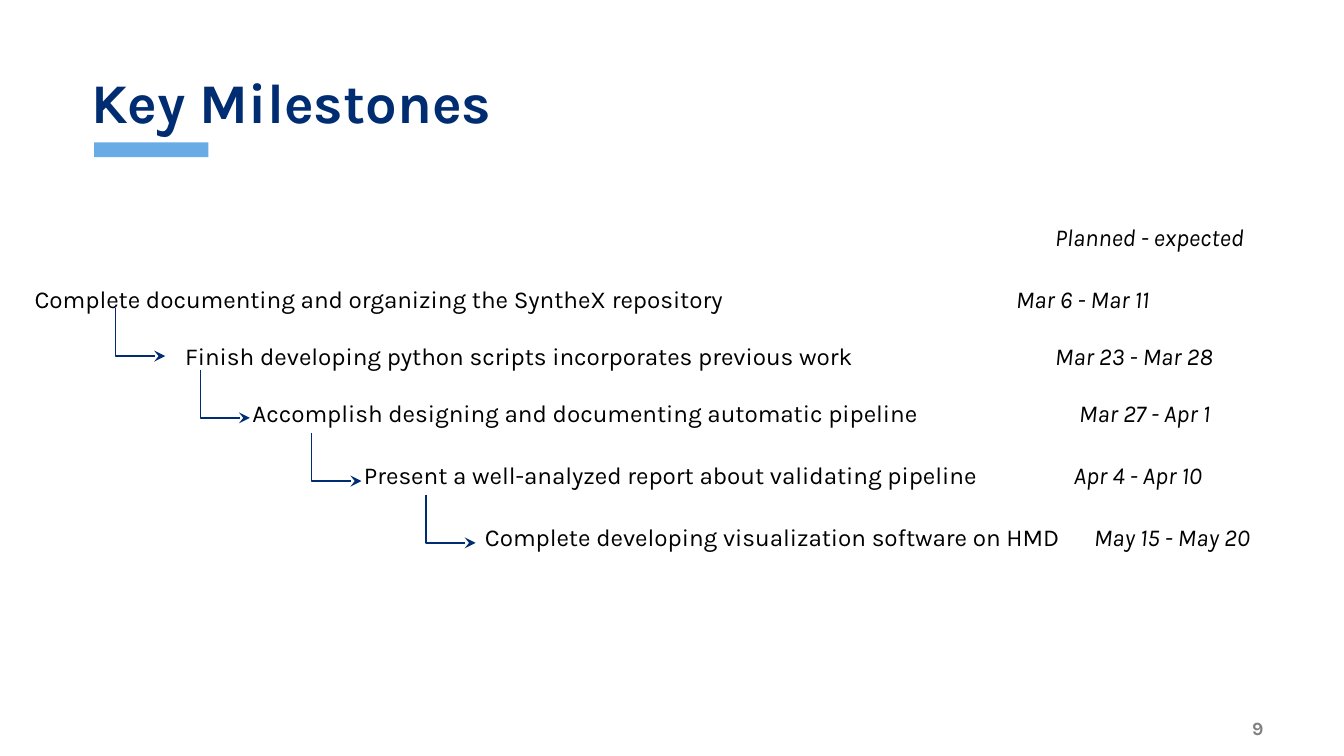
from dataclasses import dataclass
from typing import Optional

from lxml.etree import SubElement
from pptx import Presentation
from pptx.dml.color import RGBColor
from pptx.enum.shapes import MSO_CONNECTOR as Connector, MSO_SHAPE as Preset
from pptx.enum.text import MSO_ANCHOR as Anchor, MSO_AUTO_SIZE as AutoSize, PP_ALIGN as Align
from pptx.oxml.ns import qn
from pptx.util import Inches, Pt

FONT = "Karla"
COLORS = {"navy": "002D72", "sky": "69ACE5", "ink": "000000", "grey": "7F7F7F"}
COLUMNS, ROWS = 100, 56.25
LINE_ROWS = 4.2
ARROW_COLUMNS, ARROW_ROWS = 3.7, 3.6
TITLE_ONLY = 5


@dataclass(frozen=True)
class Area:
    column: float
    row: float
    columns: float
    rows: float = LINE_ROWS


@dataclass(frozen=True)
class Milestone:
    goal: str
    dates: str
    area: Area
    date_column: float
    arrow_start: Optional[tuple[float, float]] = None


MILESTONES = [
    Milestone("Complete documenting and organizing the SyntheX repository",
              "Mar 6 - Mar 11", Area(1.6, 19.8, 100), 75.6, (8.6, 22.9)),
    Milestone("Finish developing python scripts incorporates previous work",
              "Mar 23 - Mar 28", Area(12.8, 24.1, 88.5), 78.5, (14.9, 27.5)),
    Milestone("Accomplish designing and documenting automatic pipeline",
              "Mar 27 - Apr 1", Area(17.8, 28.3, 84.3), 80.3, (23.2, 32.2)),
    Milestone("Present a well-analyzed report about validating pipeline",
              "Apr 4 - Apr 10", Area(26.1, 32.9, 73.6), 79.9, (31.7, 36.8)),
    Milestone("Complete developing visualization software on HMD",
              "May 15 - May 20", Area(35.1, 37.5, 64.8), 81.4),
]


def cells(count: float) -> int:
    return Inches(count / 10)


def place(area: Area) -> tuple[int, int, int, int]:
    return cells(area.column), cells(area.row), cells(area.columns), cells(area.rows)


def style(run, size: float, color: str, bold: bool = False, italic: bool = False) -> None:
    font = run.font
    font.name, font.size = FONT, Pt(size)
    font.bold, font.italic = bold, italic
    font.color.rgb = RGBColor.from_string(COLORS[color])


def add_line(slide, area: Area, inset_rows: float = 1):
    frame = slide.shapes.add_textbox(*place(area)).text_frame
    frame.word_wrap = True
    frame.margin_left = frame.margin_right = cells(1)
    frame.margin_top = frame.margin_bottom = cells(inset_rows)
    return frame


def add_title(slide, text: str, area: Area) -> None:
    title = slide.shapes.title
    title.left, title.top, title.width, title.height = place(area)
    frame = title.text_frame
    frame.text = text
    frame.auto_size = AutoSize.NONE
    frame.vertical_anchor = Anchor.BOTTOM
    heading = frame.paragraphs[0]
    heading.alignment, heading.line_spacing = Align.LEFT, 0.9
    style(heading.runs[0], 30, "navy", bold=True)


def add_accent(slide, area: Area) -> None:
    accent = slide.shapes.add_shape(Preset.RECTANGLE, *place(area))
    accent.shadow.inherit = False
    accent.fill.solid()
    accent.fill.fore_color.rgb = RGBColor.from_string(COLORS["sky"])
    accent.line.fill.background()


def add_milestone(slide, milestone: Milestone) -> None:
    frame = add_line(slide, milestone.area)
    frame.auto_size = AutoSize.SHAPE_TO_FIT_TEXT
    entry = frame.paragraphs[0]
    entry.line_spacing = 1.15
    tabs = SubElement(entry._p.get_or_add_pPr(), qn("a:tabLst"))
    tab_position = cells(milestone.date_column - milestone.area.column - 1)
    SubElement(tabs, qn("a:tab"), pos=str(tab_position), algn="l")
    for text, italic in ((milestone.goal + "\t", False), (milestone.dates, True)):
        run = entry.add_run()
        run.text = text
        style(run, 13, "ink", italic=italic)


def add_arrow(slide, column: float, row: float) -> None:
    arrow = slide.shapes.add_connector(
        Connector.ELBOW, cells(column), cells(row),
        cells(column + ARROW_COLUMNS), cells(row + ARROW_ROWS))
    arrow.line.color.rgb = RGBColor.from_string(COLORS["navy"])
    arrow.line.width = Pt(0.75)
    SubElement(arrow.line._get_or_add_ln(), qn("a:tailEnd"), type="stealth")
    properties = arrow._element.spPr
    SubElement(properties, qn("a:effectLst"))
    guides = properties.find(qn("a:prstGeom")).get_or_add_avLst()
    SubElement(guides, qn("a:gd"), name="adj1", fmla="val 0")


def add_column_heading(slide, text: str, area: Area) -> None:
    frame = add_line(slide, area)
    frame.text = text
    frame.auto_size = AutoSize.SHAPE_TO_FIT_TEXT
    style(frame.paragraphs[0].runs[0], 13, "ink", italic=True)


def add_page_number(slide, number: str, area: Area) -> None:
    frame = add_line(slide, area, inset_rows=0.5)
    frame.text = number
    frame.vertical_anchor = Anchor.MIDDLE
    frame.paragraphs[0].alignment = Align.RIGHT
    style(frame.paragraphs[0].runs[0], 10, "grey", bold=True)


def main() -> None:
    deck = Presentation()
    deck.slide_width, deck.slide_height = cells(COLUMNS), cells(ROWS)
    slide = deck.slides.add_slide(deck.slide_layouts[TITLE_ONLY])
    add_accent(slide, Area(7, 10.6, 8.5, 1.1))
    add_page_number(slide, "9", Area(86.3, 53.2, 8.7, 1.9))
    add_title(slide, "Key Milestones", Area(5.8, 1.2, 88.5, 9.4))
    for milestone in MILESTONES:
        add_milestone(slide, milestone)
        if milestone.arrow_start:
            add_arrow(slide, *milestone.arrow_start)
    add_column_heading(slide, "Planned - expected", Area(77.5, 15.5, 17.5))
    deck.save("out.pptx")


if __name__ == "__main__":
    main()
